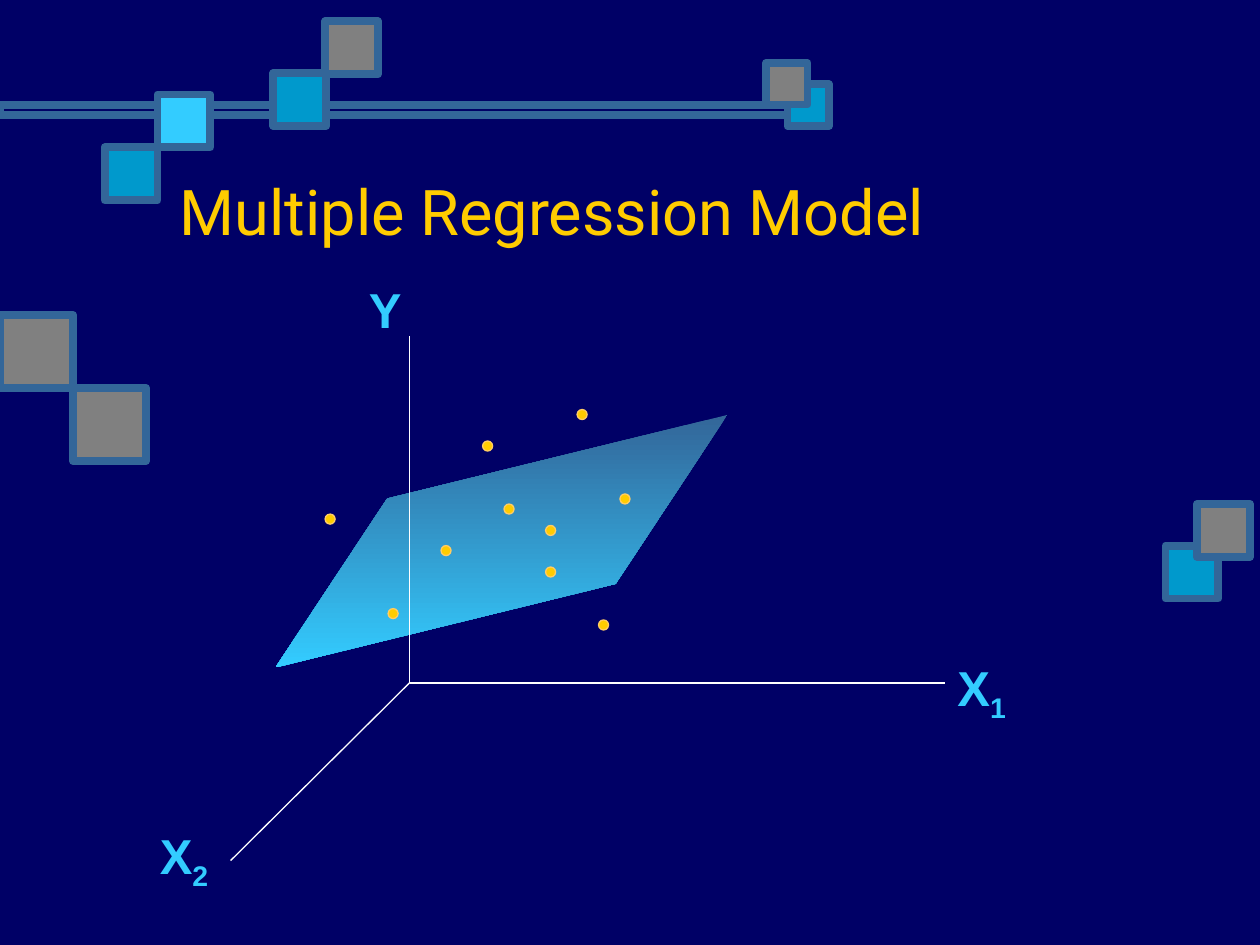
"""Build the multiple regression model slide with its plane, points and axes."""
from typing import NamedTuple

from lxml.etree import SubElement
from pptx import Presentation
from pptx.dml.color import RGBColor
from pptx.enum.shapes import MSO_CONNECTOR, MSO_SHAPE as Preset
from pptx.enum.text import MSO_ANCHOR as Anchor, MSO_AUTO_SIZE as AutoSize
from pptx.oxml.ns import qn
from pptx.shapes.autoshape import Shape
from pptx.slide import Slide
from pptx.text.text import TextFrame
from pptx.util import Inches, Pt

NAVY = RGBColor(0x00, 0x00, 0x66)
STEEL = RGBColor(0x33, 0x66, 0x99)
TEAL = RGBColor(0x00, 0x99, 0xCC)
GRAY = RGBColor(0x80, 0x80, 0x80)
SKY = RGBColor(0x33, 0xCC, 0xFF)
GOLD = RGBColor(0xFF, 0xCC, 0x00)
PALE_GOLD = RGBColor(0xFF, 0xCC, 0x66)
WHITE = RGBColor(0xFF, 0xFF, 0xFF)

ORIGIN = (3.25, 5.42)
POINT_SIZE = 0.08


class Square(NamedTuple):
    left: float
    top: float
    size: float
    color: RGBColor


class Axis(NamedTuple):
    end: tuple[float, float]
    label_box: tuple[float, float, float, float]
    letter: str
    subscript: str = ""
    wrap: bool = False


SQUARES = [
    Square(6.25, 0.67, 0.33, TEAL),
    Square(6.08, 0.5, 0.33, GRAY),
    Square(9.25, 4.33, 0.42, TEAL),
    Square(9.5, 4, 0.42, GRAY),
    Square(0, 2.5, 0.58, GRAY),
    Square(0.58, 3.08, 0.58, GRAY),
    Square(2.17, 0.58, 0.42, TEAL),
    Square(0.83, 1.17, 0.42, TEAL),
    Square(1.25, 0.75, 0.42, SKY),
    Square(2.58, 0.17, 0.42, GRAY),
]
POINTS = [
    (2.58, 4.08), (3.83, 3.5), (3.5, 4.33), (4.58, 3.25), (4.33, 4.5),
    (4.92, 3.92), (4, 4), (4.33, 4.17), (3.08, 4.83), (4.75, 4.92),
]
AXES = [
    Axis((3.25, 2.67), (2.83, 2.17, 0.46, 0.57), "Y"),
    Axis((1.83, 6.83), (1.17, 6.5, 0.61, 0.57), "X", "2"),
    Axis((7.5, 5.42), (7.5, 5.17, 0.75, 0.57), "X", "1", wrap=True),
]


def add_preset(slide: Slide, preset: Preset, left: float, top: float,
               width: float, height: float) -> Shape:
    shape = slide.shapes.add_shape(
        preset, Inches(left), Inches(top), Inches(width), Inches(height))
    shape.shadow.inherit = False
    return shape


def outline(shape: Shape, color: RGBColor, points: float) -> None:
    shape.line.color.rgb = color
    shape.line.width = Pt(points)


def fill_solid(shape: Shape, color: RGBColor) -> None:
    shape.fill.solid()
    shape.fill.fore_color.rgb = color


def add_decoration(slide: Slide) -> None:
    bar = add_preset(slide, Preset.RECTANGLE, 0, 0.83, 6.42, 0.08)
    bar.fill.background()
    outline(bar, STEEL, 4.5)
    for left, top, size, color in SQUARES:
        square = add_preset(slide, Preset.RECTANGLE, left, top, size, size)
        fill_solid(square, color)
        outline(square, STEEL, 4.5)


def add_plane(slide: Slide) -> None:
    plane = add_preset(slide, Preset.PARALLELOGRAM, 2, 3.75, 3.96, 1.09)
    plane.adjustments[0] = 1.083
    plane.rotation = 346.2
    plane.line.fill.background()
    plane.fill.gradient()
    plane.fill.gradient_angle = 270
    for stop, color in zip(plane.fill.gradient_stops, (STEEL, SKY)):
        stop.color.rgb = color
    plane._element.spPr.find(qn("a:gradFill")).set("rotWithShape", "0")


def add_points(slide: Slide) -> None:
    for left, top in POINTS:
        point = add_preset(slide, Preset.OVAL, left, top, POINT_SIZE, POINT_SIZE)
        fill_solid(point, GOLD)
        outline(point, PALE_GOLD, 0.75)


def add_text(slide: Slide, box: tuple[float, float, float, float], text: str,
             font_name: str, size: float, color: RGBColor,
             bold: bool = False) -> TextFrame:
    frame = slide.shapes.add_textbox(*map(Inches, box)).text_frame
    paragraph = frame.paragraphs[0]
    paragraph.add_run().text = text
    paragraph.font.name = font_name
    paragraph.font.size = Pt(size)
    paragraph.font.color.rgb = color
    paragraph.font.bold = bold
    return frame


def add_title(slide: Slide) -> None:
    title = add_text(slide, (1.33, 1.17, 7.75, 1.58),
                     "Multiple Regression Model", "Roboto", 36, GOLD)
    title.word_wrap = True
    title.vertical_anchor = Anchor.MIDDLE
    title.margin_bottom = Inches(0.63)


def add_axis(slide: Slide, axis: Axis) -> None:
    line = slide.shapes.add_connector(
        MSO_CONNECTOR.STRAIGHT, *map(Inches, ORIGIN + axis.end))
    line.line.color.rgb = WHITE
    line.line.width = Pt(0.75)
    SubElement(line._element.spPr, qn("a:effectLst"))
    label = add_text(slide, axis.label_box, axis.letter, "Arial", 28, SKY, bold=True)
    label.word_wrap = axis.wrap
    label.auto_size = AutoSize.SHAPE_TO_FIT_TEXT
    if axis.subscript:
        subscript = label.paragraphs[0].add_run()
        subscript.text = axis.subscript
        subscript._r.get_or_add_rPr().set("baseline", "-25000")


def main() -> None:
    deck = Presentation()
    deck.slide_width, deck.slide_height = Inches(10), Inches(7.5)
    slide = deck.slides.add_slide(deck.slide_layouts[6])
    slide.background.fill.solid()
    slide.background.fill.fore_color.rgb = NAVY
    add_decoration(slide)
    add_plane(slide)
    add_points(slide)
    add_title(slide)
    for axis in AXES:
        add_axis(slide, axis)
    deck.save("out.pptx")


if __name__ == "__main__":
    main()
